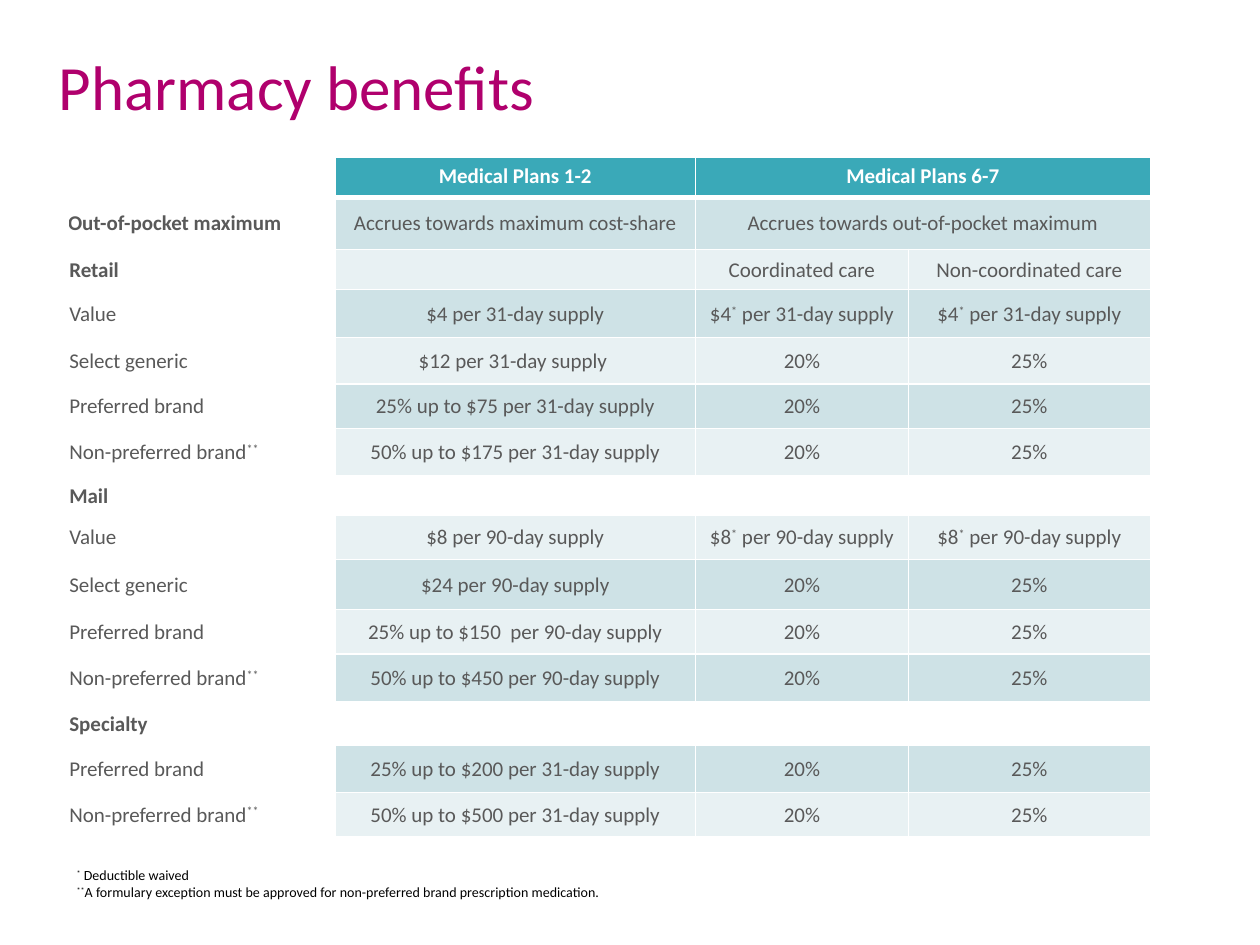
from itertools import groupby

from lxml import etree
from pptx import Presentation
from pptx.dml.color import RGBColor
from pptx.enum.text import MSO_ANCHOR, PP_ALIGN
from pptx.oxml.ns import qn
from pptx.util import Inches, Pt

CENTER, LEFT = PP_ALIGN.CENTER, PP_ALIGN.LEFT
TOP, MIDDLE = MSO_ANCHOR.TOP, MSO_ANCHOR.MIDDLE

MAGENTA = RGBColor(0xB0, 0x00, 0x6D)
TEAL = RGBColor(0x3A, 0xA9, 0xB8)
BAND_DARK = RGBColor(0xCE, 0xE2, 0xE6)
BAND_LIGHT = RGBColor(0xE8, 0xF1, 0xF3)
GRAY = RGBColor(0x59, 0x59, 0x59)
BLACK = RGBColor(0x00, 0x00, 0x00)
WHITE = RGBColor(0xFF, 0xFF, 0xFF)
FONT = "Calibri"

COL_WIDTHS = [2.12, 2.86, 1.69, 1.92]
ROW_HEIGHTS = [0.32, 0.41, 0.32, 0.38, 0.37, 0.35, 0.38, 0.31,
               0.35, 0.4, 0.35, 0.38, 0.35, 0.37, 0.35]
SHARES = ["20%", "25%"]
# A row with fewer than four texts ends in a cell merged to the right edge.
ROWS = [
    ["", "Medical Plans 1-2", "Medical Plans 6-7"],
    ["Out-of-pocket maximum", "Accrues towards maximum cost-share",
     "Accrues towards out-of-pocket maximum"],
    ["Retail", "", "Coordinated care", "Non-coordinated care"],
    ["Value", "$4 per 31-day supply"] + ["$4* per 31-day supply"] * 2,
    ["Select generic", "$12 per 31-day supply "] + SHARES,
    ["Preferred brand", "25% up to $75 per 31-day supply"] + SHARES,
    ["Non-preferred brand**", "50% up to $175 per 31-day supply"] + SHARES,
    ["Mail"],
    ["Value", "$8 per 90-day supply"] + ["$8* per 90-day supply"] * 2,
    ["Select generic", "$24 per 90-day supply"] + SHARES,
    ["Preferred brand", "25% up to $150  per 90-day supply"] + SHARES,
    ["Non-preferred brand**", "50% up to $450 per 90-day supply"] + SHARES,
    ["Specialty"],
    ["Preferred brand", "25% up to $200 per 31-day supply"] + SHARES,
    ["Non-preferred brand**", "50% up to $500 per 31-day supply"] + SHARES,
]
BOLD_LABELS = {"Out-of-pocket maximum", "Retail", "Mail", "Specialty"}


def write(p, text, size, color, bold=False, align=LEFT):
    """Fill a paragraph, raising asterisks to superscript."""
    p.alignment = align
    p.font.size = Pt(size)
    for raised, chars in groupby(text, key=lambda ch: ch == "*"):
        r = p.add_run()
        r.text = "".join(chars)
        r.font.name = FONT
        r.font.size = Pt(size)
        r.font.bold = bold
        r.font.color.rgb = color
        if raised:
            r.font._element.set("baseline", "30000")


def add_text(slide, box, lines, size, color):
    sp = slide.shapes.add_textbox(*map(Inches, box))
    tf = sp.text_frame
    tf.word_wrap = True
    for i, line in enumerate(lines):
        p = tf.add_paragraph() if i else tf.paragraphs[0]
        write(p, line, size, color)
    return sp


def set_borders(cell, top, bottom):
    """Draw white borders; top and bottom widths are in points."""
    tc_pr = cell._tc.get_or_add_tcPr()
    for side, width in (("L", 1), ("R", 1), ("T", top), ("B", bottom)):
        ln = etree.SubElement(tc_pr, qn("a:ln" + side), w=str(Pt(width)))
        fill = etree.SubElement(ln, qn("a:solidFill"))
        etree.SubElement(fill, qn("a:srgbClr"), val=str(WHITE))


def set_margins(cell, row, col, text):
    if row > 1 and text:
        cell.margin_left = cell.margin_right = cell.margin_top = Inches(0.01)
        cell.margin_bottom = 0
    elif row == 1 and col == 0:
        cell.margin_left = 0


def style_cell(cell, row, col, text, filled):
    set_borders(cell, 3 if row == 1 else 1, 3 if row == 0 else 1)
    if not filled:
        cell.fill.background()
    else:
        cell.fill.solid()
        band = BAND_DARK if row % 2 else BAND_LIGHT
        cell.fill.fore_color.rgb = band if row else TEAL
    set_margins(cell, row, col, text)
    cell.vertical_anchor = MIDDLE if row else TOP
    write(cell.text_frame.paragraphs[0], text, 12, GRAY if row else WHITE,
          bold=row == 0 or text in BOLD_LABELS, align=CENTER if col else LEFT)


def add_benefits_table(slide):
    n_cols = len(COL_WIDTHS)
    frame = slide.shapes.add_table(
        len(ROWS), n_cols, Inches(0.54), Inches(1.25),
        Inches(sum(COL_WIDTHS)), Inches(sum(ROW_HEIGHTS)))
    table = frame.table
    table.first_row = table.horz_banding = False
    for column, width in zip(table.columns, COL_WIDTHS):
        column.width = Inches(width)
    for i, (texts, height) in enumerate(zip(ROWS, ROW_HEIGHTS)):
        table.rows[i].height = Inches(height)
        padded = texts + [""] * (n_cols - len(texts))
        for j, text in enumerate(padded):
            style_cell(table.cell(i, j), i, j, text, j > 0 and len(texts) > 1)
        if len(texts) < n_cols:
            table.cell(i, len(texts) - 1).merge(table.cell(i, n_cols - 1))


def main():
    prs = Presentation()
    prs.slide_width, prs.slide_height = Inches(10), Inches(7.5)
    slide = prs.slides.add_slide(prs.slide_layouts[6])
    add_text(slide, (0.37, 0.33, 9.06, 0.6), ["Pharmacy benefits"], 36, MAGENTA)
    add_benefits_table(slide)
    add_text(slide, (0.51, 6.83, 7.73, 0.37), [
        "* Deductible waived",
        "**A formulary exception must be approved for non-preferred brand "
        "prescription medication.",
    ], 8, BLACK)
    prs.save("out.pptx")


if __name__ == "__main__":
    main()
